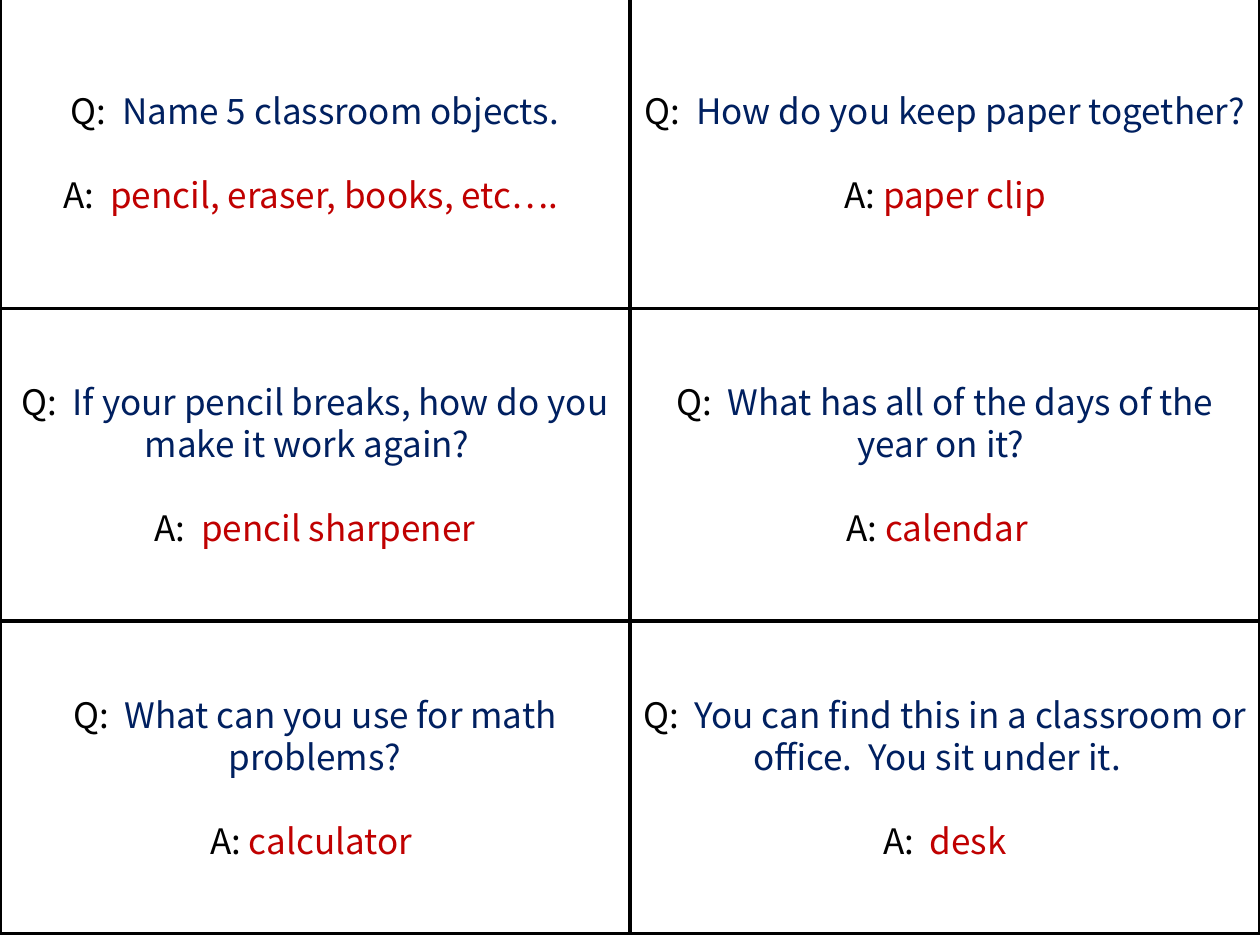
"""Build a slide of six question-and-answer cards in a two-by-three grid."""
from pptx import Presentation
from pptx import util as u
from pptx.dml.color import RGBColor
from pptx.enum import shapes, text

FONT = "Noto Sans CJK KR"
HUES = {"card": "FFFFFF", "ink": "000000", "ask": "002060", "reply": "C00000"}
CARDS = [
    [("Q:  ", "Name 5 classroom objects.", "A:  ", "pencil, eraser, books, etc…. "),
     ("Q:  ", "How do you keep paper together? ", "A: ", "paper clip")],
    [("Q:  ", "If your pencil breaks, how do you make it work again?  ",
      "A:  ", "pencil sharpener"),
     ("Q:  ", "What has all of the days of the year on it? ", "A: ", "calendar  ")],
    [("Q:  ", "What can you use for math problems?", "A: ", "calculator "),
     ("Q:  ", "You can find this in a classroom or office.  You sit under it.  ",
      "A:  ", "desk")],
]
TOP, WIDE, HIGH = -0.03, 5, 2.48


def hue(name):
    return RGBColor.from_string(HUES[name])


def write(para, parts, size=20, pitch=24, before=0):
    para.alignment = text.PP_ALIGN.CENTER
    para.line_spacing = u.Pt(pitch)
    para.space_before = u.Pt(before)
    for words, tint in parts:
        run = para.add_run()
        run.text = words
        run.font.name = FONT
        run.font.size = u.Pt(size)
        run.font.color.rgb = hue(tint)


def draw(slide, row, col, card):
    box = slide.shapes.add_shape(
        shapes.MSO_SHAPE.RECTANGLE, u.Inches(col * WIDE),
        u.Inches(TOP + row * HIGH), u.Inches(WIDE), u.Inches(HIGH))
    box.shadow.inherit = False
    box.fill.solid()
    box.fill.fore_color.rgb = hue("card")
    box.line.color.rgb = hue("ink")
    box.line.width = u.Pt(2)
    frame = box.text_frame
    frame.word_wrap = True
    frame.vertical_anchor = text.MSO_ANCHOR.MIDDLE
    mark, ask, sign, reply = card
    write(frame.paragraphs[0], [(mark, "ink"), (ask, "ask")])
    write(frame.add_paragraph(), [(sign, "ink"), (reply, "reply")], before=24)


def main():
    deck = Presentation()
    deck.slide_width, deck.slide_height = u.Inches(10), u.Inches(7.5)
    slide = deck.slides.add_slide(deck.slide_layouts[6])
    for row, pair in enumerate(CARDS):
        for col, card in enumerate(pair):
            draw(slide, row, col, card)
    deck.save("out.pptx")


if __name__ == "__main__":
    main()
